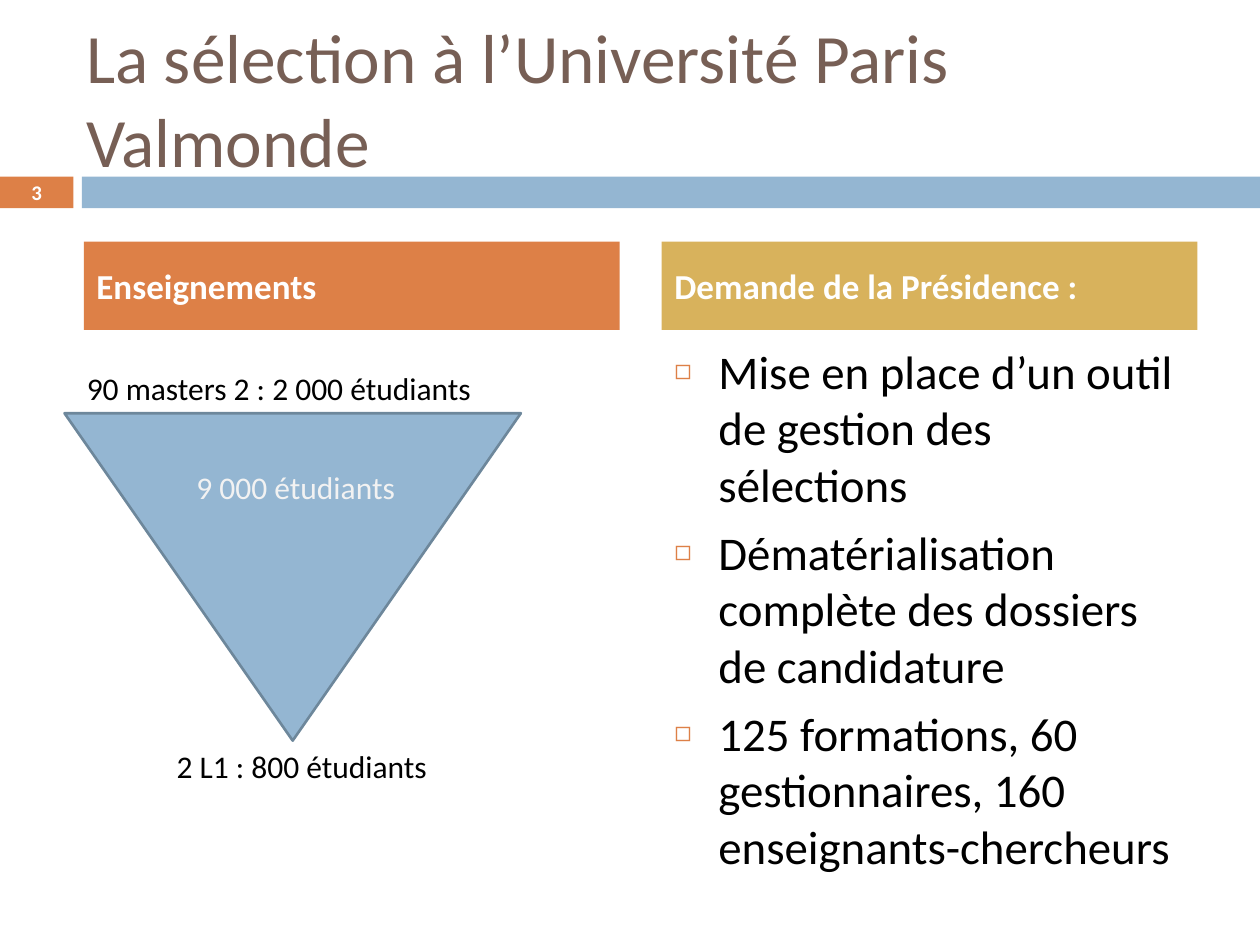
from lxml import etree
from pptx import Presentation
from pptx import util as u
from pptx.dml.color import RGBColor
from pptx.enum import shapes, text
from pptx.oxml import ns

FONT = "Calibri"
ORANGE = RGBColor(0xDD, 0x80, 0x47)
BLUE = RGBColor(0x94, 0xB6, 0xD2)
BLUE_EDGE = RGBColor(0x6D, 0x87, 0x9B)
GOLD = RGBColor(0xD8, 0xB2, 0x5C)
BROWN = RGBColor(0x77, 0x5F, 0x55)
WHITE = RGBColor(0xFF, 0xFF, 0xFF)
PALE = RGBColor(0xF2, 0xF2, 0xF2)
BLACK = RGBColor(0, 0, 0)

LEFT, RIGHT = text.PP_ALIGN.LEFT, text.PP_ALIGN.RIGHT
CENTER = text.PP_ALIGN.CENTER
TOP, MIDDLE = text.MSO_ANCHOR.TOP, text.MSO_ANCHOR.MIDDLE


def place(shape, box):
    for side, length in zip(("left", "top", "width", "height"), box):
        setattr(shape, side, u.Cm(length))


def write(shape, lines, size, color, bold=False, align=LEFT, anchor=TOP, before=0):
    """Fill the shape with one paragraph per line, all in the same format."""
    frame = shape.text_frame
    frame.text = "\n".join(lines)
    frame_format = {"word_wrap": True, "auto_size": text.MSO_AUTO_SIZE.NONE,
                    "vertical_anchor": anchor}
    for name, value in frame_format.items():
        setattr(frame, name, value)
    font_format = {"name": FONT, "size": u.Pt(size), "bold": bold}
    for paragraph in frame.paragraphs:
        paragraph.alignment = align
        paragraph.space_before = u.Pt(before)
        for run in paragraph.runs:
            for name, value in font_format.items():
                setattr(run.font, name, value)
            run.font.color.rgb = color


def add_bullet(paragraph, char, color, percent, indent):
    props = paragraph._p.get_or_add_pPr()
    props.set("marL", str(u.Cm(indent)))
    props.set("indent", str(-u.Cm(indent)))
    bullet_color = etree.SubElement(props, ns.qn("a:buClr"))
    etree.SubElement(bullet_color, ns.qn("a:srgbClr"), val=str(color))
    etree.SubElement(props, ns.qn("a:buSzPct"), val=str(percent * 1000))
    etree.SubElement(props, ns.qn("a:buChar"), char=char)


def add_block(slide, kind, box, fill, edge=None):
    block = slide.shapes.add_shape(kind, *map(u.Cm, box))
    block.shadow.inherit = False
    block.fill.solid()
    block.fill.fore_color.rgb = fill
    if edge is None:
        block.line.fill.background()
    else:
        block.line.color.rgb = edge
        block.line.width = u.Pt(1.5)
    return block


def add_label(slide, box, words, size, color, **layout):
    label = slide.shapes.add_textbox(*map(u.Cm, box))
    write(label, [words], size, color, **layout)


def page_band(slide, box, number):
    left, top, width, height = box
    number_width, gap = 1.48, 0.17
    bar_left = left + number_width + gap
    rect = shapes.MSO_SHAPE.RECTANGLE
    number_box = (left, top, number_width, height)
    add_block(slide, rect, number_box, ORANGE)
    add_block(slide, rect, (bar_left, top, left + width - bar_left, height), BLUE)
    add_label(slide, number_box, number, 11.9, WHITE,
              bold=True, align=CENTER, anchor=MIDDLE)


def slide_title(title, box, words):
    place(title, box)
    write(title, [words], 39.6, BROWN, anchor=MIDDLE)


def column_heading(heading, box, words, fill):
    place(heading, box)
    heading.fill.solid()
    heading.fill.fore_color.rgb = fill
    write(heading, [words], 20, WHITE, bold=True, anchor=MIDDLE, before=7)


def request_list(requests, box, lines):
    place(requests, box)
    write(requests, lines, 26.8, BLACK, before=7)
    for paragraph in requests.text_frame.paragraphs:
        add_bullet(paragraph, "◻", ORANGE, 60, 0.89)


def student_funnel(slide, box):
    """Inverted triangle with labels above, inside and below."""
    left, top, width, height = box
    funnel = add_block(slide, shapes.MSO_SHAPE.ISOSCELES_TRIANGLE, box, BLUE, BLUE_EDGE)
    funnel.rotation = 180
    label_height = 1.02
    labels = [
        ("2 L1 : 800 étudiants", 2.01, height, 6.15, BLACK),
        ("90 masters 2 : 2 000 étudiants", 0.2, -label_height, 9.14, BLACK),
        ("9 000 étudiants", 2.41, 0.99, 4.9, PALE),
    ]
    for words, dx, dy, label_width, color in labels:
        add_label(slide, (left + dx, top + dy, label_width, label_height),
                  words, 18, color)


def main():
    deck = Presentation()
    deck.slide_width, deck.slide_height = u.Cm(25.4), u.Cm(19.05)
    slide = deck.slides.add_slide(deck.slide_layouts.get_by_name("Comparison"))
    title, teaching, spare, demand, requests = slide.placeholders
    spare.element.getparent().remove(spare.element)

    page_band(slide, (0, 3.56, 25.4, 0.64), "3")
    # The title overhangs the band, so it goes in front of it.
    slide.shapes._spTree.append(title.element)
    slide_title(title, (1.48, 0.76, 22.65, 2.42),
                "La sélection à l’Université Paris Valmonde")

    column_width, heading_top, heading_height = 10.8, 4.87, 1.78
    teaching_left, demand_left = 1.69, 13.34
    column_heading(teaching, (teaching_left, heading_top, column_width, heading_height),
                   "Enseignements", ORANGE)
    column_heading(demand, (demand_left, heading_top, column_width, heading_height),
                   "Demande de la Présidence :", GOLD)
    request_list(requests, (demand_left, 6.78, column_width, 9.96), [
        "Mise en place d’un outil de gestion des sélections",
        "Dématérialisation complète des dossiers de candidature",
        "125 formations, 60 gestionnaires, 160 enseignants-chercheurs",
    ])
    student_funnel(slide, (1.3, 8.33, 9.2, 6.6))
    deck.save("out.pptx")


if __name__ == "__main__":
    main()
